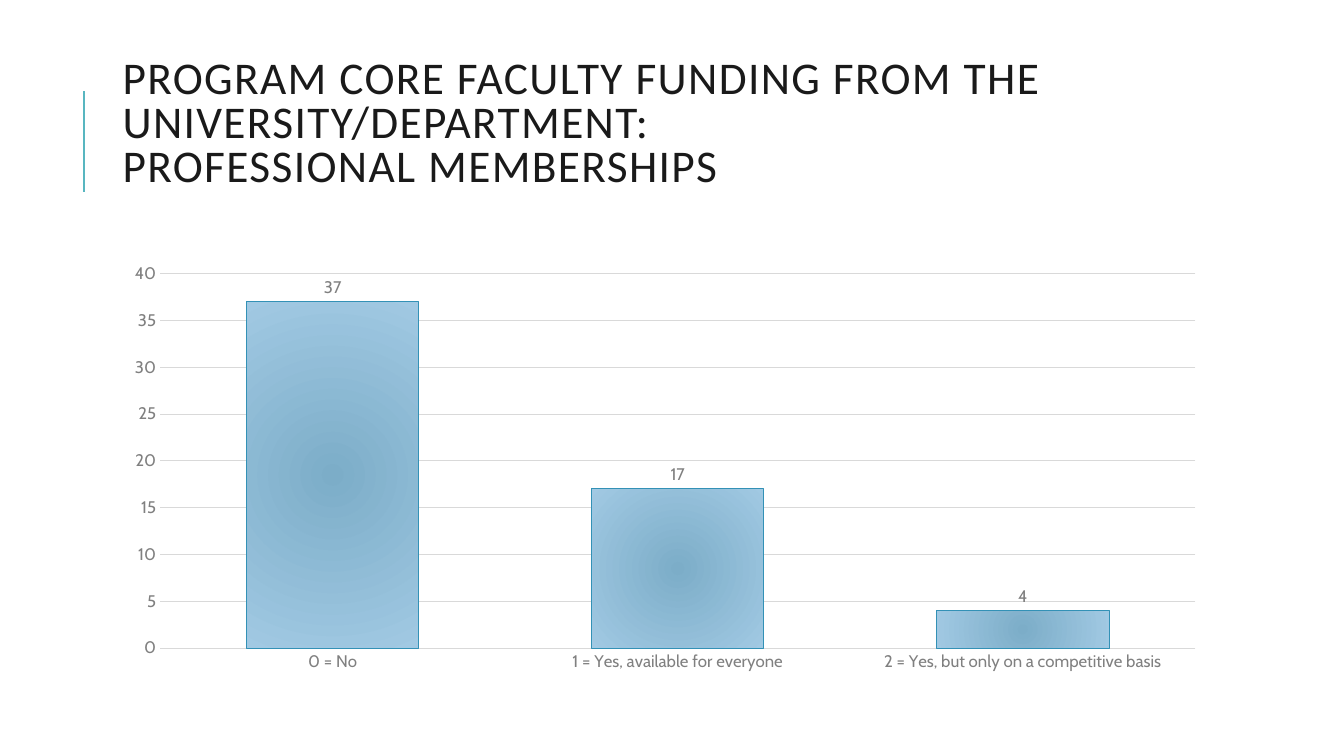
from pptx import Presentation
from pptx.chart.data import CategoryChartData
from pptx.dml.color import RGBColor
from pptx.enum.chart import XL_CHART_TYPE as ChartType, XL_LABEL_POSITION as LabelPosition, XL_TICK_MARK as TickMark
from pptx.enum.shapes import MSO_CONNECTOR as Connector
from pptx.enum.text import MSO_ANCHOR as Anchor
from pptx.oxml import parse_xml
from pptx.oxml.ns import nsdecls, qn
from pptx.util import Cm, Pt

COLORS = {
    "accent": "58B6C0",
    "title": "1A1A1A",
    "label": "808080",
    "grid": "D9D9D9",
    "bar_center": "7CADC8",
    "bar_edge": "A1C9E3",
    "bar_line": "3391B6",
}


def style_font(font, name, size, color):
    font.name = name
    font.size = Pt(size)
    font.color.rgb = RGBColor.from_string(COLORS[color])


def style_line(line, color, width):
    line.color.rgb = RGBColor.from_string(COLORS[color])
    line.width = Pt(width)


prs = Presentation()
prs.slide_width = Cm(33.87)
prs.slide_height = Cm(19.05)
slide = prs.slides.add_slide(prs.slide_layouts[6])

accent = slide.shapes.add_connector(Connector.STRAIGHT, Cm(2.12), Cm(4.83), Cm(2.12), Cm(2.29))
style_line(accent.line, "accent", 1.5)
accent._element.spPr.append(parse_xml(f"<a:effectLst {nsdecls('a')}/>"))

title = slide.shapes.add_textbox(Cm(2.84), Cm(1.63), Cm(27), Cm(4.17)).text_frame
title.word_wrap = True
title.vertical_anchor = Anchor.MIDDLE
title.margin_bottom = Cm(1.23)
heading = title.paragraphs[0]
heading.text = "PROGRAM CORE FACULTY FUNDING FROM THE UNIVERSITY/DEPARTMENT:\vPROFESSIONAL MEMBERSHIPS"
heading.line_spacing = 0.8
style_font(heading.font, "Calibri", 32.4, "title")
for run in heading.runs:
    run.font._element.set("spc", "100")

funding = CategoryChartData()
funding.categories = ["0 = No", "1 = Yes, available for everyone", "2 = Yes, but only on a competitive basis"]
funding.add_series("Series 1", (37, 17, 4))
chart = slide.shapes.add_chart(
    ChartType.COLUMN_CLUSTERED, Cm(2.84), Cm(6.43), Cm(27.84), Cm(10.72), funding
).chart
chart.has_legend = False
chart.has_title = False
chart.font.name = "Cabin"
chart.font.size = Pt(10)

answers, counts = chart.category_axis, chart.value_axis
for axis in (answers, counts):
    axis.major_tick_mark = TickMark.NONE
    axis.minor_tick_mark = TickMark.NONE
    style_font(axis.tick_labels.font, "Cabin", 12, "label")
style_line(answers.format.line, "grid", 0.75)
counts.format.line.fill.background()
counts.minimum_scale = 0
counts.maximum_scale = 40
counts.major_unit = 5
counts.has_major_gridlines = True
style_line(counts.major_gridlines.format.line, "grid", 0.75)

bars = chart.plots[0]
bars.gap_width = 100
bars.overlap = -24
bars.vary_by_categories = False
memberships = bars.series[0]
style_line(memberships.format.line, "bar_line", 0.75)
memberships.format.fill.solid()
bar_properties = memberships._element.find(qn("c:spPr"))
bar_properties.replace(bar_properties.find(qn("a:solidFill")), parse_xml(
    f'<a:gradFill {nsdecls("a")} rotWithShape="1"><a:gsLst>'
    f'<a:gs pos="0"><a:srgbClr val="{COLORS["bar_center"]}"/></a:gs>'
    f'<a:gs pos="100000"><a:srgbClr val="{COLORS["bar_edge"]}"/></a:gs>'
    '</a:gsLst><a:path path="circle">'
    '<a:fillToRect l="100000" t="100000" r="100000" b="100000"/>'
    '</a:path></a:gradFill>'
))

labels = memberships.data_labels
labels.show_value = True
labels.position = LabelPosition.OUTSIDE_END
style_font(labels.font, "Cabin", 12, "label")

prs.save("out.pptx")
